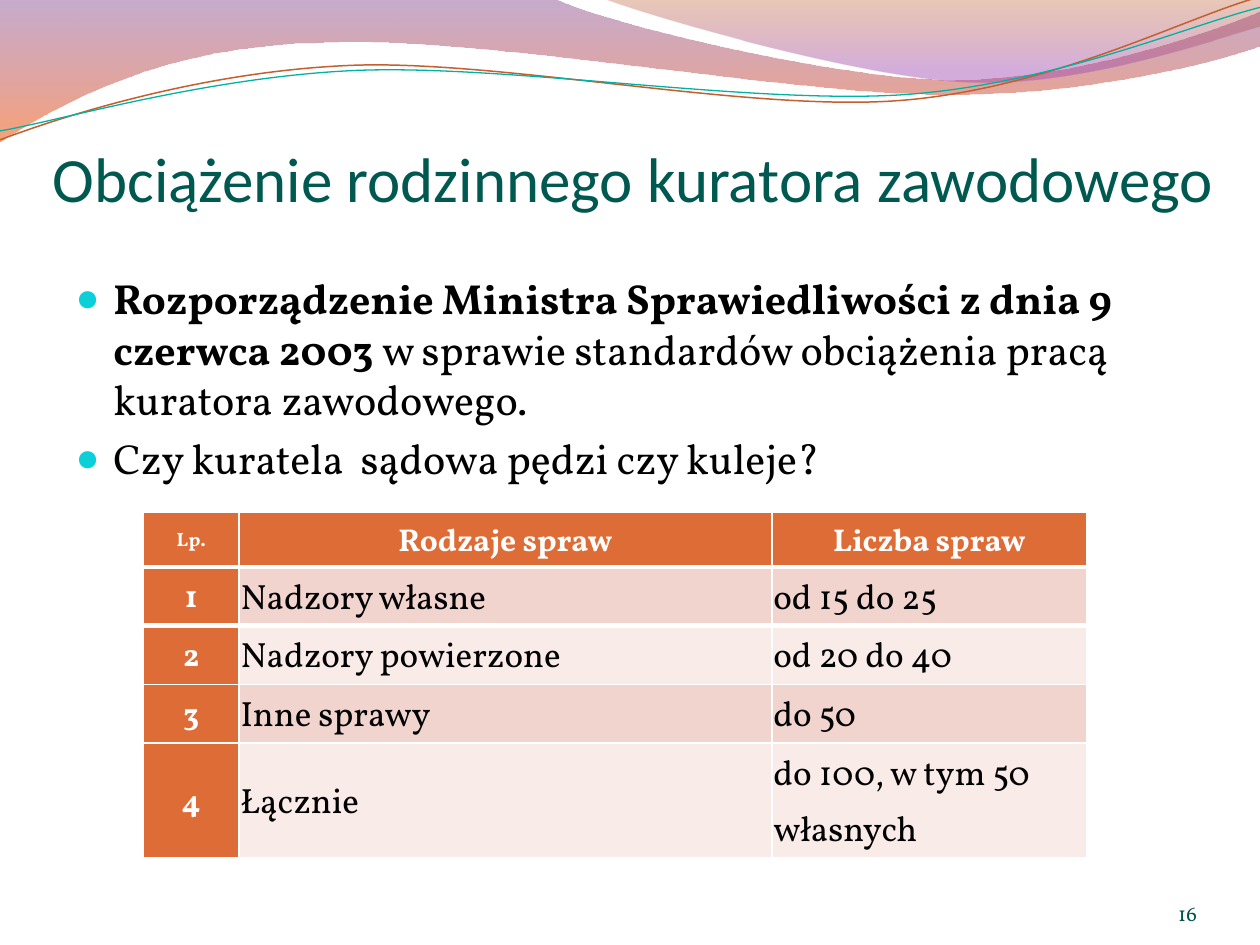
"""Build the slide on the caseload of a professional family court officer."""
from dataclasses import dataclass

from lxml.etree import SubElement
from pptx import Presentation
from pptx.dml.color import RGBColor
from pptx.enum.text import MSO_ANCHOR, PP_ALIGN
from pptx.oxml.ns import qn
from pptx.util import Cm, Pt


@dataclass(frozen=True)
class Theme:
    heading_font: str = "Calibri"
    text_font: str = "Vollkorn"
    title: str = "005950"
    number: str = "00554C"
    text: str = "000000"
    white: str = "FFFFFF"
    bullet: str = "0BD0D9"
    header: str = "DE6C36"
    bands: tuple = ("F2D4CE", "F9EBE8")
    left_wave: tuple = ((0, "834591", 45), (1, "F35307", 55))
    right_wave: tuple = ((0, "B74915", 30), (0.8, "A14BB4", 45))
    orange_line: str = "C45F30"
    teal_line: str = "02B2A1"
    title_size: int = 36
    body_size: int = 24
    cell_size: int = 20
    header_size: int = 18
    number_size: int = 12
    small_size: int = 11


def draw_curve(shapes, chains, closed):
    vertices = [(Cm(x), Cm(y)) for chain in chains for x, y in chain]
    builder = shapes.build_freeform(*vertices[0])
    builder.add_line_segments(vertices[1:], close=closed)
    shape = builder.convert_to_shape()
    shape.shadow.inherit = False
    outline = next(shape.element.iter(qn("a:path")))
    nodes = list(outline)
    offset = 0
    for chain in chains:
        for start in range(offset + 1, offset + len(chain), 3):
            curve = SubElement(outline, qn("a:cubicBezTo"))
            nodes[start].addprevious(curve)
            for node in nodes[start:start + 3]:
                curve.append(node[0])
                outline.remove(node)
        offset += len(chain)
    return shape


def style(paragraph, size, color, font=None, bold=None):
    paragraph.font.name = font or theme.text_font
    paragraph.font.size = Pt(size)
    paragraph.font.color.rgb = RGBColor.from_string(color)
    paragraph.font.bold = bold


theme = Theme()
presentation = Presentation()
presentation.slide_width, presentation.slide_height = Cm(25.4), Cm(19.05)
slide = presentation.slides.add_slide(presentation.slide_layouts[1])
shapes = slide.shapes

left_wave = [
    [(0, -0.03)],
    [(11.18, -0.03), (12.09, 0.43), (16.87, 1.6), (19.25, 1.6), (21.67, 1.6), (24.33, 0.66), (25.4, 0.23)],
    [(25.43, 0.91), (24.97, 1.12), (22.1, 1.93), (18.95, 1.9), (15.8, 1.9), (9.7, 0.71), (6.53, 0.86),
     (3.28, 0.89), (1.17, 2.11), (-0.03, 2.87)],
]
right_wave = [
    [(12.17, -0.03), (12.93, 0.28), (17.32, 1.57), (19.53, 1.65), (21.74, 1.75), (24.41, 0.81), (25.4, 0.53)],
    [(25.4, 0)],
]
for chains, stops in ((left_wave, theme.left_wave), (right_wave, theme.right_wave)):
    wave = draw_curve(shapes, chains, True)
    wave.line.fill.background()
    wave.fill.gradient()
    wave.fill.gradient_angle = 270
    for stop, (position, color, _) in zip(wave.fill.gradient_stops, stops):
        stop.position = position
        stop.color.rgb = RGBColor.from_string(color)
    for element, (_, _, opacity) in zip(wave.element.spPr.iter(qn("a:srgbClr")), stops):
        SubElement(element, qn("a:alpha"), val=str(opacity * 1000))

orange_line = [(0, 2.82), (1.22, 2.36), (4.01, 1.45), (7.04, 1.32), (10.03, 1.19), (15.06, 2.26),
               (18.11, 2.03), (21.16, 1.8), (23.83, 0.38), (25.35, -0.05)]
teal_line = [(0, 2.64), (1.19, 2.44), (4.17, 1.55), (7.19, 1.42), (10.24, 1.3), (15.16, 2.11),
             (18.21, 1.91), (21.23, 1.7), (23.9, 0.53), (25.4, 0.15)]
for chain, color, width in ((orange_line, theme.orange_line, 0.85), (teal_line, theme.teal_line, 0.75)):
    curve = draw_curve(shapes, [chain], False)
    curve.fill.background()
    curve.line.color.rgb = RGBColor.from_string(color)
    curve.line.width = Pt(width)

title = shapes.title
title.left, title.top, title.width, title.height = Cm(0.7), Cm(2.73), Cm(24.13), Cm(1.6)
title.text = "Obciążenie rodzinnego kuratora zawodowego"
frame = title.text_frame
frame.vertical_anchor = MSO_ANCHOR.BOTTOM
frame.margin_left = frame.margin_right = frame.margin_bottom = 0
frame.paragraphs[0].alignment = PP_ALIGN.CENTER
style(frame.paragraphs[0], theme.title_size, theme.title, theme.heading_font)

body = slide.placeholders[1]
body.left, body.top, body.width, body.height = Cm(1.27), Cm(5.37), Cm(22.86), Cm(12.19)
items = [
    [("Rozporządzenie Ministra Sprawiedliwości z dnia 9 czerwca 2003 ", True),
     ("w sprawie standardów obciążenia pracą kuratora zawodowego.", False)],
    [("Czy kuratela  sądowa pędzi czy kuleje?", False)],
]
for index, item in enumerate(items):
    paragraph = body.text_frame.add_paragraph() if index else body.text_frame.paragraphs[0]
    for text, bold in item:
        run = paragraph.add_run()
        run.text = text
        run.font.bold = bold
    properties = paragraph._p.get_or_add_pPr()
    properties.set("marL", str(Cm(0.76)))
    properties.set("indent", str(-Cm(0.76)))
    SubElement(SubElement(properties, qn("a:buClr")), qn("a:srgbClr"), val=theme.bullet)
    SubElement(properties, qn("a:buSzPct"), val="95000")
    SubElement(properties, qn("a:buChar"), char="●")
    style(paragraph, theme.body_size, theme.text)

rows = [
    ("Lp.", "Rodzaje spraw", "Liczba spraw"),
    ("1", "Nadzory własne", "od 15 do 25"),
    ("2", "Nadzory powierzone", "od 20 do 40"),
    ("3", "Inne sprawy", "do 50"),
    ("4", "Łącznie", "do 100, w tym 50 własnych"),
]
table = shapes.add_table(5, 3, Cm(2.89), Cm(10.32), Cm(19.02), Cm(6.45)).table
table.first_col = True
for column, width in zip(table.columns, (1.93, 10.74, 6.35)):
    column.width = Cm(width)
for row, height in zip(table.rows, (1.11, 1.11, 1.11, 1.11, 2.01)):
    row.height = Cm(height)
for row_index, row in enumerate(rows):
    for column_index, text in enumerate(row):
        cell = table.cell(row_index, column_index)
        cell.text = text
        cell.vertical_anchor = MSO_ANCHOR.MIDDLE
        cell.margin_left = cell.margin_right = cell.margin_top = Cm(0.03)
        cell.margin_bottom = Cm(0.02)
        heading = row_index == 0 or column_index == 0
        fill = theme.header if heading else theme.bands[(row_index - 1) % 2]
        if row_index < 2:
            side = ("a:lnB", "a:lnT")[row_index]
            border = SubElement(cell._tc.get_or_add_tcPr(), qn(side), w=str(Pt(3)))
            SubElement(SubElement(border, qn("a:solidFill")), qn("a:srgbClr"), val=theme.white)
        cell.fill.solid()
        cell.fill.fore_color.rgb = RGBColor.from_string(fill)
        paragraph = cell.text_frame.paragraphs[0]
        paragraph.line_spacing = 1.15
        paragraph.alignment = PP_ALIGN.CENTER if heading else PP_ALIGN.LEFT
        size = theme.header_size if heading else theme.cell_size
        if row_index == column_index == 0:
            size = theme.small_size
        style(paragraph, size, theme.white if heading else theme.text, bold=heading)

number = shapes.add_textbox(Cm(22.02), Cm(17.65), Cm(2.11), Cm(1.02))
frame = number.text_frame
frame.word_wrap = True
frame.vertical_anchor = MSO_ANCHOR.BOTTOM
frame.margin_left = frame.margin_right = frame.margin_top = frame.margin_bottom = 0
frame.text = "16"
frame.paragraphs[0].alignment = PP_ALIGN.RIGHT
style(frame.paragraphs[0], theme.number_size, theme.number)

presentation.save("out.pptx")
